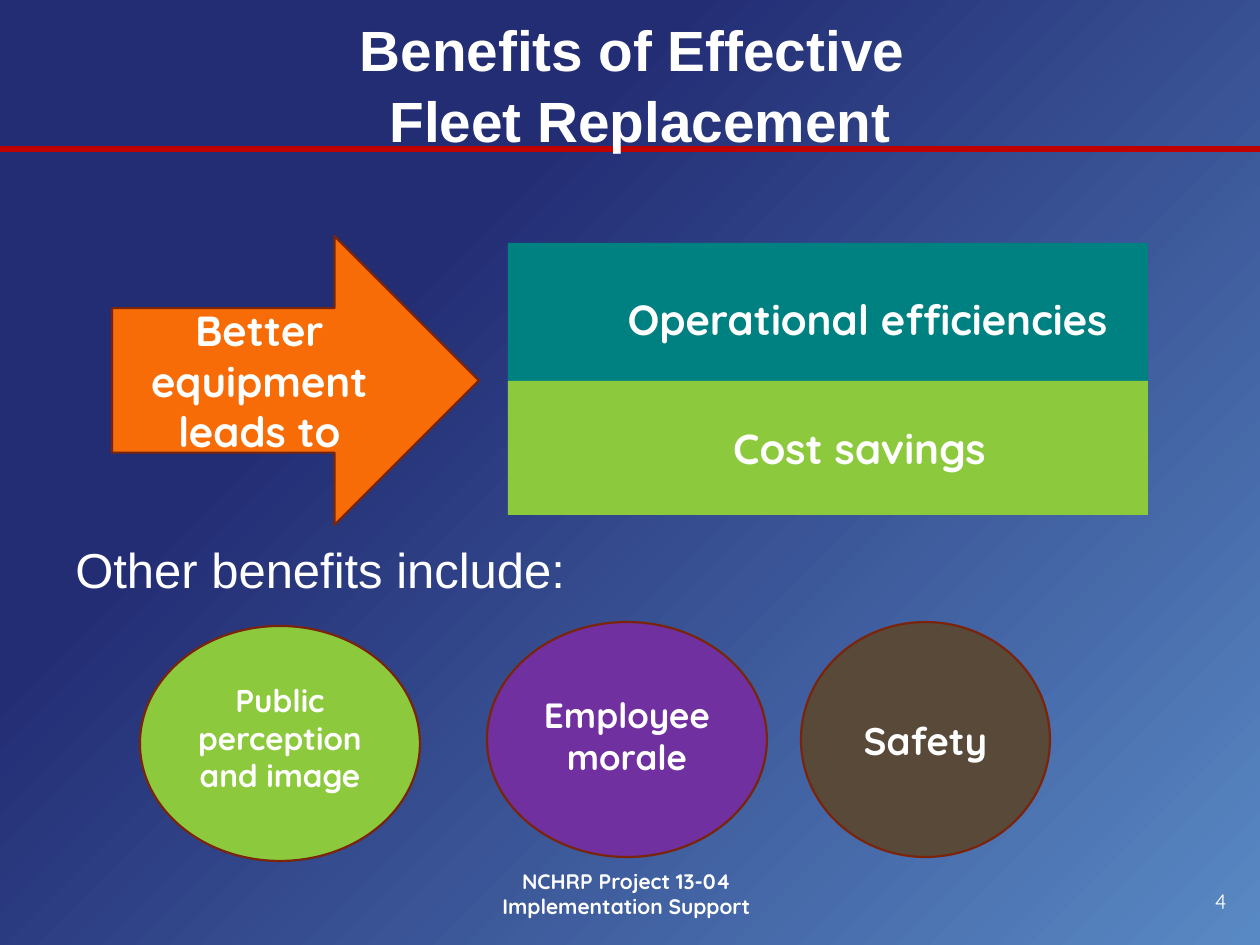
from dataclasses import dataclass

from lxml.etree import SubElement
from pptx import Presentation
from pptx.dml.color import RGBColor
from pptx.enum.shapes import MSO_CONNECTOR as Connector, MSO_SHAPE as Shape
from pptx.enum.text import MSO_ANCHOR as Anchor, MSO_AUTO_SIZE as AutoSize, PP_ALIGN as Align
from pptx.oxml import parse_xml
from pptx.oxml.ns import nsdecls, qn
from pptx.util import Emu, Pt

EMU_PER_PX = 914400 / 126
PAGE_WIDTH, PAGE_HEIGHT = 1260, 945


@dataclass(frozen=True)
class Theme:
    heading_font: str = "Arial"
    label_font: str = "Quicksand"
    text: str = "FFFFFF"
    glow: str = "5989C4"
    navy: str = "232D74"
    red: str = "C00000"
    outline: str = "7A240C"
    orange: str = "F76C06"
    teal: str = "008181"
    green: str = "8DC93C"
    purple: str = "7030A0"
    brown: str = "584939"
    title_size: float = 32.4
    lead_size: float = 28
    label_size: float = 24
    footer_size: float = 12


THEME = Theme()


def px(length):
    return Emu(round(length * EMU_PER_PX))


def color(code):
    return RGBColor.from_string(code)


def write(shape, text, size, font=THEME.label_font, bold=True, align=Align.CENTER,
          anchor=Anchor.MIDDLE):
    frame = shape.text_frame
    frame.word_wrap = True
    frame.auto_size = AutoSize.NONE
    frame.vertical_anchor = anchor
    para = frame.paragraphs[0]
    para.text = text
    para.alignment = align
    para.font.name = font
    para.font.size = Pt(size)
    para.font.bold = bold
    para.font.color.rgb = color(THEME.text)
    return para


def set_background(page):
    """Radial glow centred on the bottom right corner."""
    background = parse_xml(
        f'<p:bg {nsdecls("p", "a")}><p:bgPr><a:gradFill rotWithShape="1"><a:gsLst>'
        f'<a:gs pos="0"><a:srgbClr val="{THEME.glow}"/></a:gs>'
        f'<a:gs pos="69000"><a:srgbClr val="{THEME.navy}"/></a:gs></a:gsLst>'
        '<a:path path="circle"><a:fillToRect l="100000" t="100000"/></a:path>'
        '</a:gradFill><a:effectLst/></p:bgPr></p:bg>')
    page._element.cSld.insert(0, background)


def add_rule(page, top):
    """Full-width line, placed behind the title."""
    rule = page.shapes.add_connector(Connector.STRAIGHT, px(0), px(top), px(PAGE_WIDTH), px(top))
    rule.line.color.rgb = color(THEME.red)
    rule.line.width = Pt(3)
    SubElement(rule._element.spPr, qn("a:effectLst"))
    page.shapes._spTree.insert(2, rule._element)


def set_title(page, text, left, top, width, height):
    title = page.shapes.title
    title.left, title.top, title.width, title.height = map(px, (left, top, width, height))
    para = write(title, text, THEME.title_size, THEME.heading_font)
    para.line_spacing = 1.05


def add_text(page, bounds, text, size, **style):
    box = page.shapes.add_textbox(*map(px, bounds))
    write(box, text, size, **style)


def add_block(page, kind, bounds, fill, text, size, outlined=True):
    block = page.shapes.add_shape(kind, *map(px, bounds))
    block.shadow.inherit = False
    block.fill.solid()
    block.fill.fore_color.rgb = color(fill)
    if outlined:
        block.line.color.rgb = color(THEME.outline)
        block.line.width = Pt(1.25)
    else:
        block.line.fill.background()
    write(block, text, size)
    return block


def main():
    deck = Presentation()
    deck.slide_width, deck.slide_height = px(PAGE_WIDTH), px(PAGE_HEIGHT)
    page = deck.slides.add_slide(deck.slide_layouts[5])
    set_background(page)
    add_rule(page, 149)
    set_title(page, "Benefits of Effective \vFleet Replacement", 10, 10, 1260, 145)

    add_text(page, (63, 533, 1144, 70), "Other benefits include:", THEME.lead_size,
             font=THEME.heading_font, bold=False, align=Align.LEFT, anchor=Anchor.TOP)
    add_text(page, (955, 876, 284, 50), "4", THEME.footer_size, bold=False, align=Align.RIGHT)
    add_text(page, (431, 861, 391, 66), "NCHRP Project 13-04 Implementation Support",
             THEME.footer_size)

    add_block(page, Shape.RIGHT_ARROW, (112, 236, 367, 289), THEME.orange,
              "Better equipment leads to", THEME.label_size)

    for top, height, fill, text, indent in (
            (243, 151, THEME.teal, "Operational efficiencies", 100),
            (381, 134, THEME.green, "Cost savings", 84)):
        bar = add_block(page, Shape.RECTANGLE, (508, top, 640, height), fill, text,
                        THEME.label_size, outlined=False)
        bar.text_frame.margin_left = px(indent)
        bar.text_frame.margin_right = px(21)

    for left, top, width, fill, text, size, bottom_inset in (
            (140, 626, 280, THEME.green, "Public perception and image", 18, 18),
            (487, 622, 280, THEME.purple, "Employee morale", 20, 14),
            (801, 622, 249, THEME.brown, "Safety", 22, 6)):
        oval = add_block(page, Shape.OVAL, (left, top, width, 235), fill, text, size)
        oval.text_frame.margin_bottom = px(bottom_inset)

    deck.save("out.pptx")


if __name__ == "__main__":
    main()
